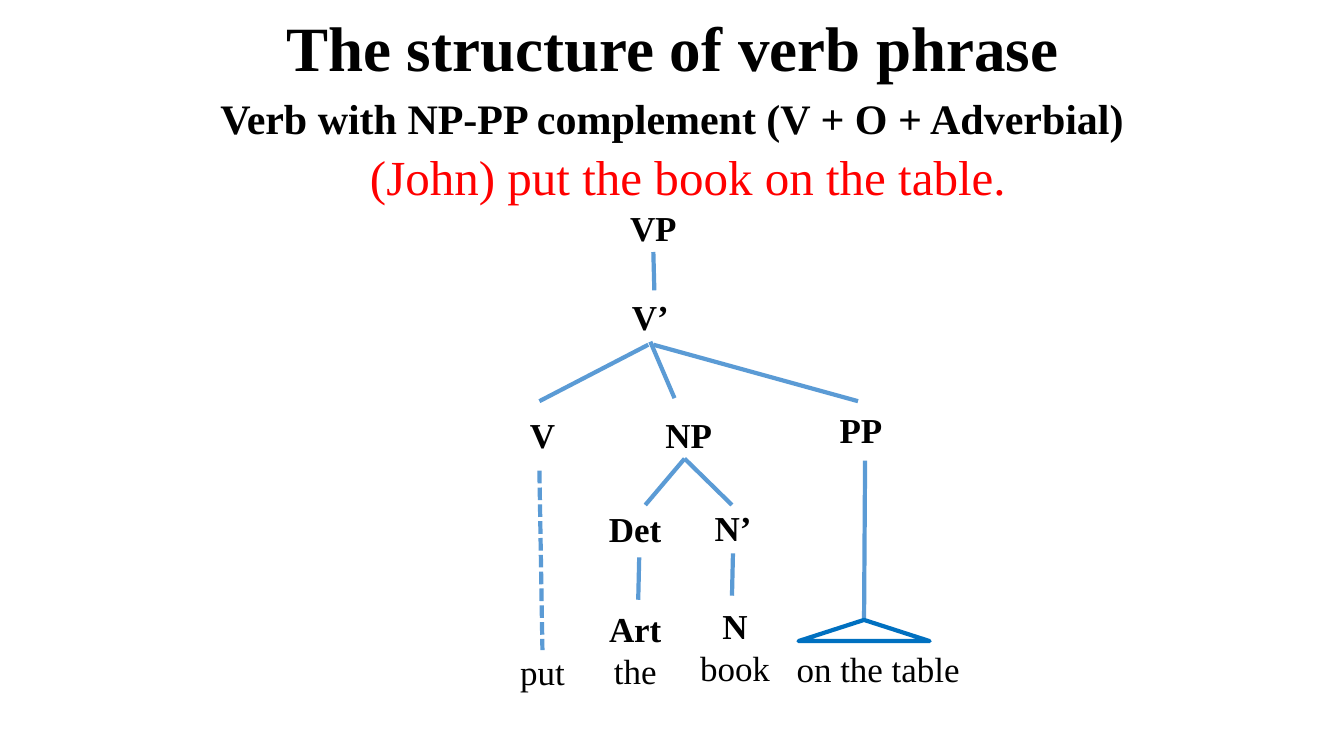
from lxml import etree
from pptx import Presentation
from pptx.dml.color import RGBColor
from pptx.enum.dml import MSO_LINE
from pptx.enum.shapes import MSO_CONNECTOR, MSO_SHAPE
from pptx.enum.text import MSO_ANCHOR, MSO_AUTO_SIZE, PP_ALIGN
from pptx.oxml.ns import qn
from pptx.util import Inches, Pt

CENTER = PP_ALIGN.CENTER
MIDDLE = MSO_ANCHOR.MIDDLE
TOP = MSO_ANCHOR.TOP
FIXED = MSO_AUTO_SIZE.NONE
STRAIGHT = MSO_CONNECTOR.STRAIGHT
RECT = MSO_SHAPE.RECTANGLE
TRIANGLE = MSO_SHAPE.ISOSCELES_TRIANGLE
DASH = MSO_LINE.SQUARE_DOT

COLORS = {"ink": "000000", "red": "FF0000", "white": "FFFFFF",
          "branch": "5B9BD5", "roof": "0070C0"}


class Tree:
    font = "Times New Roman"
    size = 25
    width = 3

    def __init__(self, slide):
        self.slide = slide

    def color(self, name):
        return RGBColor.from_string(COLORS[name])

    def words(self, shape, lines, size, bold, color="ink", anchor=MIDDLE):
        frame = shape.text_frame
        frame.text = "\n".join(lines)
        frame.word_wrap = True
        frame.auto_size = FIXED
        frame.vertical_anchor = anchor
        for row, para in enumerate(frame.paragraphs):
            para.alignment = CENTER
            for run in para.runs:
                run.font.name = self.font
                run.font.size = Pt(size)
                run.font.bold = bold and row == 0
                run.font.color.rgb = self.color(color)

    def holder(self, shape, box, text, size, anchor):
        shape.left, shape.top, shape.width, shape.height = map(Inches, box)
        self.words(shape, [text], size, True, anchor=anchor)
        para = shape.text_frame.paragraphs[0]
        para.line_spacing = 0.9
        return para

    def title(self, box, text):
        self.holder(self.slide.shapes.title, box, text, 45, MIDDLE)

    def body(self, box, text):
        para = self.holder(self.slide.placeholders[1], box, text, 30, TOP)
        para.space_before = Pt(10)
        props = para._p.get_or_add_pPr()
        props.set("marL", "0")
        props.set("indent", "0")
        etree.SubElement(props, qn("a:buNone"))

    def label(self, mid, top, width, height, lines, bold=True):
        box = map(Inches, (mid - width / 2, top, width, height))
        self.words(self.slide.shapes.add_textbox(*box), lines, self.size, bold)

    def shape(self, kind, box):
        shape = self.slide.shapes.add_shape(kind, *map(Inches, box))
        shape.shadow.inherit = False
        return shape

    def banner(self, box, text):
        shape = self.shape(RECT, box)
        shape.fill.solid()
        shape.fill.fore_color.rgb = self.color("white")
        shape.line.fill.background()
        self.words(shape, [text], 35, False, "red")

    def roof(self, box):
        shape = self.shape(TRIANGLE, box)
        shape.fill.background()
        self.stroke(shape.line, "roof")

    def stroke(self, line, color):
        line.color.rgb = self.color(color)
        line.width = Pt(self.width)

    def branch(self, start, end, dash=None):
        ends = map(Inches, (*start, *end))
        link = self.slide.shapes.add_connector(STRAIGHT, *ends)
        self.stroke(link.line, "branch")
        if dash:
            link.line.dash_style = dash
        etree.SubElement(link._element.spPr, qn("a:effectLst"))


def main():
    deck = Presentation()
    deck.slide_width = Inches(13.33)
    deck.slide_height = Inches(7.5)
    tree = Tree(deck.slides.add_slide(deck.slide_layouts[1]))

    tree.title((0.92, 0.16, 11.5, 0.7), "The structure of verb phrase")
    tree.body((0.92, 0.92, 11.5, 6.2),
              "Verb with NP-PP complement (V + O + Adverbial)")
    tree.banner((2.65, 1.42, 8.35, 0.65), "(John) put the book on the table.")

    nodes = [
        (6.48, 2, 0.87, 0.51, ["VP"]),
        (6.45, 2.88, 1, 0.51, ["V’"]),
        (5.38, 4, 0.87, 0.62, ["V"]),
        (6.83, 4, 0.87, 0.62, ["NP"]),
        (8.54, 3.95, 1.17, 0.62, ["PP"]),
        (6.3, 4.99, 1, 0.51, ["Det"]),
        (7.27, 4.98, 1, 0.51, ["N’"]),
        (6.3, 6.15, 0.91, 0.59, ["Art", "the"]),
        (7.29, 6.08, 1.24, 0.66, ["N", "book"]),
    ]
    for node in nodes:
        tree.label(*node)
    tree.label(5.38, 6.45, 0.99, 0.43, ["put"], bold=False)
    tree.label(8.71, 6.35, 2.26, 0.57, ["on the table"], bold=False)

    links = [
        ((6.48, 2.5), (6.49, 2.88)),
        ((6.43, 3.42), (5.35, 3.98)),
        ((6.45, 3.39), (6.69, 3.95)),
        ((6.48, 3.42), (8.51, 3.98)),
        ((6.79, 4.55), (6.4, 5.01)),
        ((6.79, 4.55), (7.26, 5.01)),
        ((6.34, 5.53), (6.33, 5.95)),
        ((7.27, 5.49), (7.26, 5.91)),
        ((8.58, 4.57), (8.57, 6.15)),
    ]
    for start, end in links:
        tree.branch(start, end)
    tree.branch((5.35, 4.67), (5.38, 6.45), DASH)
    tree.roof((7.92, 6.15, 1.3, 0.21))

    deck.save("out.pptx")


if __name__ == "__main__":
    main()
